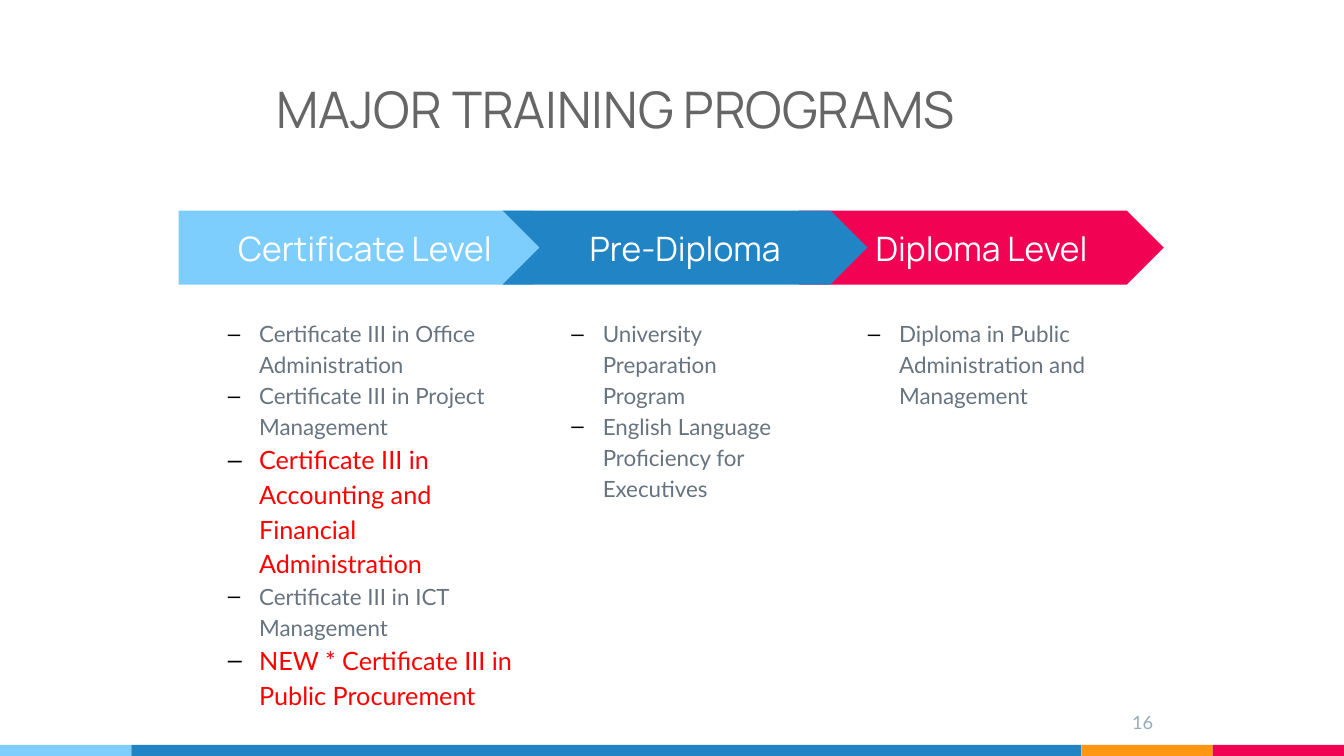
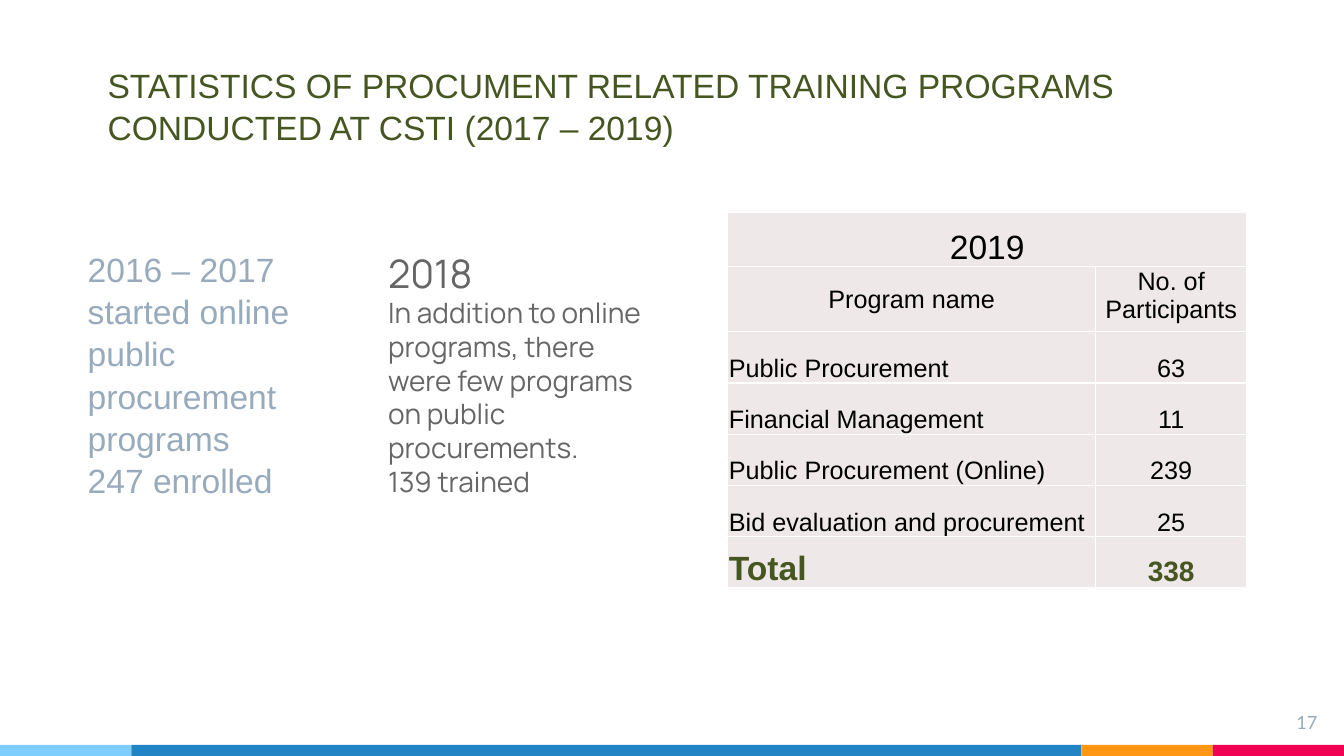
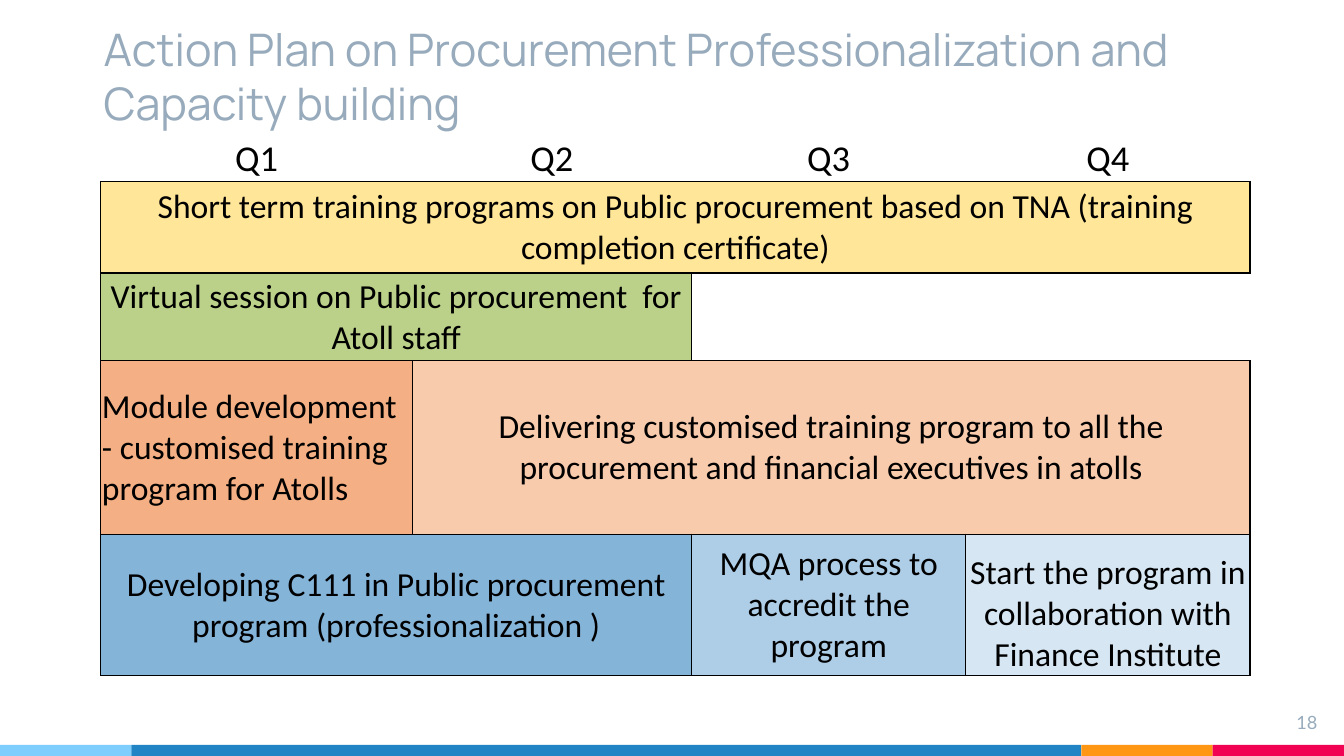
"""Build three slides on procurement training programs, statistics and the action plan."""
import pptx
import pptx.dml.color
import pptx.enum.shapes
import pptx.enum.text
import pptx.oxml
import pptx.oxml.ns
import pptx.util

COLOURS = {
    "sky": "7ECEFD", "blue": "2185C5", "orange": "FF9715", "pink": "F20253",
    "white": "FFFFFF", "black": "000000", "grey": "666666", "slate": "677480",
    "mist": "97ABBC", "red": "FF0000", "olive": "465621", "blush": "EFE8E8",
    "yellow": "FFE699", "green": "BBD189", "apricot": "F4B084", "peach": "F8CBAD",
    "steel": "85B4D9", "powder": "AECDE6", "ice": "D6E6F2",
}
Cm = pptx.util.Cm
ALIGN = pptx.enum.text.PP_ALIGN
ANCHOR = pptx.enum.text.MSO_ANCHOR
SHAPE = pptx.enum.shapes.MSO_SHAPE
INSET = Cm(0.25)
NO_STYLE = "{2D5ABB26-0587-4C30-8999-92F81FD0307C}"


def assign(target, values):
    """Set every attribute named in a dict."""
    for name, value in values.items():
        setattr(target, name, value)


def rgb(colour):
    """Return the colour object for a name in the palette."""
    return pptx.dml.color.RGBColor.from_string(COLOURS[colour])


def element(xml):
    """Build one drawing element."""
    return pptx.oxml.parse_xml(xml.replace(" ", f" {pptx.oxml.ns.nsdecls('a')} ", 1))


def text_format(font, size, colour, bold=False, align=ALIGN.LEFT, spacing=1.0):
    """Describe how a paragraph looks."""
    return {
        "font": {"name": font, "size": pptx.util.Pt(size), "bold": bold},
        "colour": colour,
        "paragraph": {"alignment": align, "line_spacing": spacing,
                      "space_before": pptx.util.Pt(0), "space_after": pptx.util.Pt(0)},
    }


class Deck:
    """Hold the shared style and the current slide."""

    def __init__(self):
        """Start a widescreen presentation."""
        self.presentation = pptx.Presentation()
        assign(self.presentation, {"slide_width": Cm(33.87), "slide_height": Cm(19.05)})
        self.slide = None
        self.bodies = []

    def new_slide(self, layout, number, number_box):
        """Add a slide with its page number."""
        self.slide = self.presentation.slides.add_slide(self.presentation.slide_layouts[layout])
        self.bodies = [shape for shape in self.slide.placeholders
                       if shape.placeholder_format.idx > 0]
        if len(self.presentation.slides) == 1:
            self.bands()
        shape = self.slide.shapes.add_textbox(0, 0, 0, 0)
        self.place(shape, number_box)
        self.fill_text(shape.text_frame,
                       [(str(number), text_format("Lato", 13, "mist", align=ALIGN.RIGHT))])

    def bands(self):
        """Put the four bottom bands on the slide master."""
        tree = self.presentation.slide_master.shapes.element
        left = 0
        for colour, width in (("sky", 3.31), ("blue", 23.94), ("orange", 3.31), ("pink", 3.31)):
            shape = self.block(SHAPE.RECTANGLE, (left, 18.77, width, 0.28), colour)
            tree.append(shape.element)
            left += width

    def place(self, shape, box):
        """Move and size a shape, given centimetres."""
        assign(shape, dict(zip(("left", "top", "width", "height"), map(Cm, box))))

    def fill_text(self, frame, lines, anchor=ANCHOR.TOP, bottom=INSET, bullet=False):
        """Fill a text frame with formatted lines."""
        assign(frame, {"word_wrap": True, "auto_size": pptx.enum.text.MSO_AUTO_SIZE.NONE,
                       "vertical_anchor": anchor, "margin_left": INSET, "margin_right": INSET,
                       "margin_top": INSET, "margin_bottom": bottom})
        for index, (text, style) in enumerate(lines):
            paragraph = frame.add_paragraph() if index else frame.paragraphs[0]
            self.line(paragraph, text, style)
            properties = paragraph._p.get_or_add_pPr()
            indent = Cm(0.79) if bullet else 0
            properties.set("marL", str(indent))
            properties.set("indent", str(-indent))
            if bullet:
                properties.append(element(
                    f'<a:buClr ><a:srgbClr val="{COLOURS["black"]}"/></a:buClr>'))
                properties.append(element('<a:buChar char="‒"/>'))
            else:
                properties.append(element("<a:buNone />"))

    def line(self, paragraph, text, style):
        """Set one paragraph as a single run."""
        run = paragraph.add_run()
        run.text = text
        assign(run.font, style["font"])
        run.font.color.rgb = rgb(style["colour"])
        assign(paragraph, style["paragraph"])

    def title(self, text, box, style):
        """Fill the title placeholder."""
        self.place(self.slide.shapes.title, box)
        self.fill_text(self.slide.shapes.title.text_frame, [(text, style)], ANCHOR.BOTTOM)

    def body(self, lines, box, **options):
        """Fill the next free body placeholder."""
        shape = self.bodies.pop(0)
        self.place(shape, box)
        self.fill_text(shape.text_frame, lines, **options)

    def block(self, kind, box, colour):
        """Add a plain filled shape."""
        shape = self.slide.shapes.add_shape(kind, *map(Cm, box))
        shape.shadow.inherit = False
        shape.fill.solid()
        shape.fill.fore_color.rgb = rgb(colour)
        shape.line.fill.background()
        return shape

    def table(self, corner, widths, heights, border):
        """Add an unstyled table and return it."""
        frame = self.slide.shapes.add_table(
            len(heights), len(widths), *map(Cm, (*corner, sum(widths), sum(heights))))
        table = frame.table
        table._tbl.tblPr.find(pptx.oxml.ns.qn("a:tableStyleId")).text = NO_STYLE
        assign(table, {"first_row": False, "horz_banding": False})
        for column, width in zip(table.columns, widths):
            column.width = Cm(width)
        for row, height in zip(table.rows, heights):
            row.height = Cm(height)
        for row_index in range(len(heights)):
            for column_index in range(len(widths)):
                edges = border["edges"].get((row_index, column_index), "LRTB")
                self.borders(table.cell(row_index, column_index), edges, border["colour"])
        return table

    def borders(self, cell, edges, colour):
        """Draw the named edges of a cell and clear the others."""
        properties = cell._tc.get_or_add_tcPr()
        for side in "LRTB":
            fill = (f'<a:solidFill><a:srgbClr val="{COLOURS[colour]}"/></a:solidFill>'
                    if side in edges else "<a:noFill/>")
            properties.append(element(f'<a:ln{side} w="12700">{fill}</a:ln{side}>'))
        cell.fill.background()

    def cell(self, table, row, column, text, style, fill=None, span=1, anchor=ANCHOR.MIDDLE):
        """Fill and widen one table cell."""
        cell = table.cell(row, column)
        if span > 1:
            cell.merge(table.cell(row, column + span - 1))
        assign(cell, {"margin_left": Cm(0.03), "margin_right": Cm(0.03),
                      "margin_top": Cm(0.03), "margin_bottom": 0, "vertical_anchor": anchor})
        if fill:
            cell.fill.solid()
            cell.fill.fore_color.rgb = rgb(fill)
        self.line(cell.text_frame.paragraphs[0], text, style)

    def finish_slide(self):
        """Remove the placeholders left empty."""
        for shape in self.bodies:
            shape.element.getparent().remove(shape.element)


def programs_slide(deck):
    """Show the three program levels and their courses."""
    deck.new_slide(4, 16, (27.79, 17.68, 1.52, 1.17))
    deck.title("MAJOR TRAINING PROGRAMS", (6.71, 0.56, 22.61, 3.18),
               text_format("Manrope", 36, "grey"))
    course = text_format("Lato", 16, "slate", spacing=1.15)
    new_course = text_format("Lato", 18, "red", spacing=1.15)
    label = text_format("Manrope", 24, "white", align=ALIGN.CENTER)
    levels = [
        ("Diploma Level", SHAPE.CHEVRON, "pink", 20.14, 9.19, 21.62, 6.22,
         [("Diploma in Public Administration and Management", course)]),
        ("Certificate Level", SHAPE.PENTAGON, "sky", 4.5, 9.86, 5.49, 7.85,
         [("Certificate III in Office Administration", course),
          ("Certificate III in Project Management", course),
          ("Certificate III in Accounting and Financial Administration", new_course),
          ("Certificate III in ICT Management", course),
          ("NEW * Certificate III in Public Procurement", new_course)]),
        ("Pre-Diploma", SHAPE.CHEVRON, "blue", 12.67, 9.19, 14.15, 6.22,
         [("University Preparation Program", course),
          ("English Language Proficiency for Executives", course)]),
    ]
    for name, kind, colour, left, width, list_left, list_width, courses in levels:
        arrow = deck.block(kind, (left, 5.31, width, 1.86), colour)
        deck.fill_text(arrow.text_frame, [(name, label)], ANCHOR.MIDDLE)
        deck.body(courses, (list_left, 7.72, list_width, 7.26), bullet=True)
    deck.finish_slide()


def statistics_slide(deck):
    """Show enrolment by year with the 2019 table."""
    deck.new_slide(3, 17, (31.42, 17.68, 2.03, 1.17))
    deck.title("STATISTICS OF PROCUMENT RELATED TRAINING PROGRAMS CONDUCTED AT CSTI (2017 – 2019)",
               (2.46, 1.98, 30.99, 1.98), text_format("Arial", 24, "olive", spacing=1.05))
    start = text_format("Arial", 24, "mist", spacing=1.05)
    deck.body([("2016 – 2017 started online public procurement", start),
               ("programs", start), ("247 enrolled", start)],
              (1.96, 7.98, 6.48, 6.05), anchor=ANCHOR.BOTTOM, bottom=Cm(1.42))
    detail = text_format("Manrope", 20, "grey")
    deck.body([("2018", text_format("Manrope", 28, "grey")),
               ("In addition to online programs, there were few programs on public procurements.",
                detail),
               ("139 trained", detail)],
              (9.53, 7.06, 7.39, 6.58), anchor=ANCHOR.BOTTOM, bottom=Cm(1.1))

    table = deck.table((18.34, 5.36), (9.27, 3.81), (1.35, 1.65) + (1.29,) * 5,
                       {"colour": "white", "edges": {}})
    centred = text_format("Arial", 18, "black", align=ALIGN.CENTER)
    deck.cell(table, 0, 0, "2019", text_format("Arial", 24, "black", align=ALIGN.CENTER),
              "blush", 2, ANCHOR.BOTTOM)
    deck.cell(table, 1, 0, "Program name", centred, "blush")
    deck.cell(table, 1, 1, "No. of Participants", centred, "blush", anchor=ANCHOR.TOP)
    name_style = text_format("Arial", 18, "black")
    rows = [("Public Procurement", "63", name_style, centred),
            ("Financial Management", "11", name_style, centred),
            ("Public Procurement (Online)", "239", name_style, centred),
            ("Bid evaluation and procurement", "25", name_style, centred),
            ("Total", "338", text_format("Arial", 24, "olive", True),
             text_format("Arial", 20, "olive", True, ALIGN.CENTER))]
    for row, (name, count, left_style, right_style) in enumerate(rows, 2):
        deck.cell(table, row, 0, name, left_style, "blush", anchor=ANCHOR.BOTTOM)
        deck.cell(table, row, 1, count, right_style, "blush", anchor=ANCHOR.BOTTOM)
    deck.finish_slide()


def plan_slide(deck):
    """Show the action plan by quarter."""
    deck.new_slide(5, 18, (31.42, 17.68, 2.03, 1.17))
    deck.title("Action Plan on Procurement Professionalization and Capacity building",
               (2.36, 0.33, 29.85, 3.18), text_format("Manrope", 32, "mist"))
    edges = {(0, column): "B" for column in range(4)}
    edges.update({(2, 2): "LTB", (2, 3): "TB"})
    table = deck.table((2.54, 2.49), (7.85, 7.04, 6.91, 7.16), (2.08, 2.31, 2.21, 4.37, 3.56),
                       {"colour": "black", "edges": edges})
    quarter = text_format("Calibri", 26, "black", align=ALIGN.CENTER)
    for column in range(4):
        deck.cell(table, 0, column, f"Q{column + 1}", quarter, anchor=ANCHOR.BOTTOM)
    left = text_format("Calibri", 24, "black")
    centred = text_format("Calibri", 24, "black", align=ALIGN.CENTER)
    activities = [
        (1, 0, "Short term training programs on Public procurement based on TNA "
               "(training completion certificate)", centred, "yellow", 4),
        (2, 0, "Virtual session on Public procurement  for Atoll staff", centred, "green", 2),
        (3, 0, "Module development - customised training program for Atolls",
         left, "apricot", 1),
        (3, 1, "Delivering customised training program to all the procurement and "
               "financial executives in atolls", centred, "peach", 3),
        (4, 0, "Developing C111 in Public procurement program (professionalization )",
         centred, "steel", 2),
        (4, 2, "MQA process to accredit the program", centred, "powder", 1),
    ]
    for activity in activities:
        deck.cell(table, *activity)
    deck.cell(table, 4, 3, "Start the program in collaboration with Finance Institute",
              centred, "ice", anchor=ANCHOR.BOTTOM)
    deck.finish_slide()


def main():
    """Build the slides and save the file."""
    deck = Deck()
    for build in (programs_slide, statistics_slide, plan_slide):
        build(deck)
    deck.presentation.save("out.pptx")


if __name__ == "__main__":
    main()
